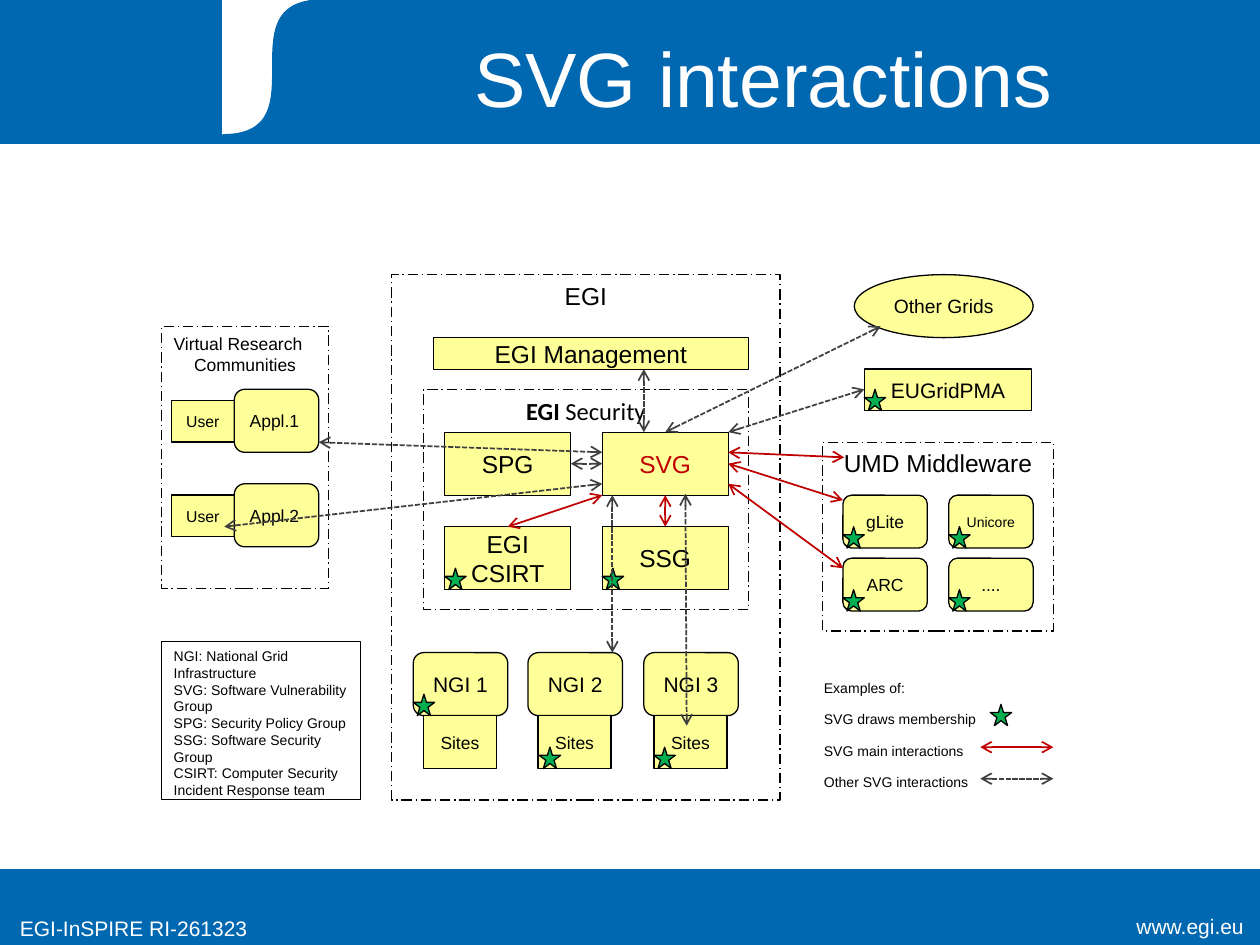
from lxml import etree
from pptx import Presentation
from pptx.dml.color import RGBColor
from pptx.enum import dml, shapes, text
from pptx.oxml.ns import qn
from pptx.util import Inches, Pt

COLORS = {"blue": "0067B1", "white": "FFFFFF", "black": "000000", "yellow": "FFFF99",
          "red": "C00000", "grey": "404040", "green": "00B050"}
KINDS = shapes.MSO_SHAPE
RECT, ROUND, OVAL = KINDS.RECTANGLE, KINDS.ROUNDED_RECTANGLE, KINDS.OVAL
LEFT, CENTER, RIGHT = text.PP_ALIGN.LEFT, text.PP_ALIGN.CENTER, text.PP_ALIGN.RIGHT
TOP, MIDDLE = text.MSO_ANCHOR.TOP, text.MSO_ANCHOR.MIDDLE

TITLE = "SVG interactions"
# (left, top, width, height), paragraphs, text format
GROUPS = [
    ((3.36, 3.09, 2.58, 1.75), [[("EGI ", True), ("Security", False)]],
     dict(size=14, font="Calibri")),
    ((3.11, 2.18, 3.08, 4.17), ["EGI"], dict(size=14)),
    ((1.28, 2.59, 1.33, 2.08), ["Virtual Research", "Communities"],
     dict(size=10, aligns=[LEFT, CENTER])),
    ((6.53, 3.51, 1.83, 1.5), ["UMD Middleware"], dict(size=14)),
]
GLOSSARY = [
    "NGI: National Grid Infrastructure",
    "SVG: Software Vulnerability Group",
    "SPG: Security Policy Group",
    "SSG: Software Security Group",
    "CSIRT: Computer Security Incident Response team",
]
# label, kind, (left, top, width, height), text size, line width
BOXES = [
    ("SPG", RECT, (3.53, 3.43, 1, 0.5), 14, 0.5),
    ("SVG", RECT, (4.78, 3.43, 1, 0.5), 14, 0.5),
    ("EGI CSIRT", RECT, (3.53, 4.18, 1, 0.5), 14, 0.5),
    ("SSG", RECT, (4.78, 4.18, 1, 0.5), 14, 0.5),
    ("EGI Management", RECT, (3.44, 2.68, 2.5, 0.25), 14, 0.5),
    ("Other Grids", OVAL, (6.78, 2.18, 1.42, 0.5), 11, 0.75),
    ("EUGridPMA", RECT, (6.86, 2.93, 1.33, 0.33), 12, 0.75),
]
for number, left in enumerate((3.28, 4.19, 5.11), 1):
    BOXES += [(f"NGI {number}", ROUND, (left, 5.18, 0.75, 0.5), 12, 0.75),
              ("Sites", RECT, (left + 0.08, 5.68, 0.58, 0.42), 10, 0.75)]
for number, top in enumerate((3.09, 3.84), 1):
    BOXES += [("User", RECT, (1.36, top + 0.09, 0.5, 0.33), 9, 0.75),
              (f"Appl.{number}", ROUND, (1.86, top, 0.67, 0.5), 10, 0.75)]
MIDDLEWARE = [[("gLite", 10), ("Unicore", 8)], [("ARC", 10), ("....", 10)]]
for row, items in enumerate(MIDDLEWARE):
    for column, (label, size) in enumerate(items):
        position = (6.69 + 0.84 * column, 3.93 + 0.5 * row, 0.67, 0.42)
        BOXES.append((label, ROUND, position, size, 0.75))

STARS = [(7.86, 5.59), (4.28, 5.93), (5.19, 5.93), (3.28, 5.51), (4.78, 4.51),
         (3.53, 4.51), (6.86, 3.09), (6.69, 4.18), (6.69, 4.68), (7.53, 4.18), (7.53, 4.68)]
MAIN_ARROWS = [
    (7.78, 5.93, 8.36, 5.93), (4.78, 3.93, 4.03, 4.18), (5.28, 3.93, 5.28, 4.18),
    (5.78, 3.59, 6.7, 3.63), (5.78, 3.68, 6.69, 3.97), (5.78, 3.84, 6.69, 4.51),
]
OTHER_ARROWS = [
    (7.78, 6.18, 8.36, 6.18), (4.86, 3.93, 4.86, 5.18), (5.44, 3.92, 5.45, 5.76),
    (5.11, 2.93, 5.11, 3.43), (5.28, 3.43, 6.99, 2.59), (2.53, 3.51, 4.78, 3.59),
    (1.78, 4.18, 4.78, 3.84), (5.78, 3.43, 6.86, 3.09), (4.53, 3.68, 4.78, 3.68),
]
LEGEND = ["Examples of:", "SVG draws membership", "SVG main interactions",
          "Other SVG interactions"]


def rgb(name):
    return RGBColor.from_string(COLORS[name])


def write_text(shape, paragraphs, size=10, font="Arial", color="black",
               aligns=(CENTER,), anchor=MIDDLE, wrap=True):
    """Each paragraph is a string or a list of (text, bold); the last align repeats."""
    frame = shape.text_frame
    frame.word_wrap = wrap
    frame.vertical_anchor = anchor
    for index, content in enumerate(paragraphs):
        paragraph = frame.add_paragraph() if index else frame.paragraphs[0]
        paragraph.alignment = aligns[min(index, len(aligns) - 1)]
        runs = [(content, None)] if isinstance(content, str) else content
        for words, bold in runs:
            run = paragraph.add_run()
            run.text = words
            run.font.name, run.font.size, run.font.bold = font, Pt(size), bold
            run.font.color.rgb = rgb(color)


def style(shape, fill=None, line="black", width=0.75):
    shape.shadow.inherit = False
    if fill:
        shape.fill.solid()
        shape.fill.fore_color.rgb = rgb(fill)
    else:
        shape.fill.background()
    shape.line.color.rgb = rgb(line)
    shape.line.width = Pt(width)
    return shape


def add_box(slide, kind, position, **look):
    return style(slide.shapes.add_shape(kind, *map(Inches, position)), **look)


def add_label(slide, position, words, **format):
    write_text(slide.shapes.add_textbox(*map(Inches, position)), [words], **format)


def add_arrow(slide, ends, color, dash=None):
    arrow = slide.shapes.add_connector(shapes.MSO_CONNECTOR.STRAIGHT, *map(Inches, ends))
    arrow.line.color.rgb = rgb(color)
    arrow.line.width = Pt(1)
    if dash:
        arrow.line.dash_style = dash
    outline = arrow.line._get_or_add_ln()
    for end in ("a:headEnd", "a:tailEnd"):
        etree.SubElement(outline, qn(end), type="arrow")
    etree.SubElement(arrow._element.spPr, qn("a:effectLst"))


def bezier(points, steps=40):
    """Points along a cubic curve, without its first one."""
    for step in range(1, steps + 1):
        t = step / steps
        weights = ((1 - t) ** 3, 3 * t * (1 - t) ** 2, 3 * t ** 2 * (1 - t), t ** 3)
        yield tuple(Inches(sum(w * p[axis] for w, p in zip(weights, points)))
                    for axis in (0, 1))


def add_bands(slide):
    add_box(slide, RECT, (0, 6.9, 10, 0.6), fill="blue", line="blue")
    add_box(slide, RECT, (0, 0, 10, 1.14), fill="blue", line="blue")
    add_box(slide, RECT, (1.77, 0, 1.97, 1.07), fill="white", line="white")
    builder = slide.shapes.build_freeform(Inches(3.74), 0)
    builder.add_line_segments([(Inches(3.74), Inches(1.07)), (Inches(1.77), Inches(1.07))],
                              close=False)
    builder.add_line_segments(bezier([(1.77, 1.07), (2.56, 1.07), (1.77, 0), (2.56, 0)]))
    style(builder.convert_to_shape(), fill="blue", line="blue")
    add_label(slide, (8.39, 7.2, 1.58, 0.31), "www.egi.eu",
              size=12, color="white", aligns=[RIGHT], anchor=TOP)
    add_label(slide, (0.06, 7.22, 2.5, 0.31), "EGI-InSPIRE RI-261323",
              size=12, color="white", aligns=[LEFT], anchor=TOP)


def add_title(slide):
    title = slide.shapes.title
    title.left, title.top, title.width, title.height = map(Inches, (2.32, 0.13, 7.48, 0.95))
    write_text(title, [TITLE], size=44, color="white")
    slide.shapes._spTree.append(title._element)  # in front of the header band


def main():
    presentation = Presentation()
    presentation.slide_width, presentation.slide_height = Inches(10), Inches(7.5)
    slide = presentation.slides.add_slide(presentation.slide_layouts[5])
    add_bands(slide)
    for position, paragraphs, format in GROUPS:
        group = add_box(slide, RECT, position)
        group.line.dash_style = dml.MSO_LINE.LONG_DASH_DOT
        write_text(group, paragraphs, anchor=TOP, **format)
    for label, kind, position, size, width in BOXES:
        box = add_box(slide, kind, position, fill="yellow", width=width)
        write_text(box, [label], size=size, color="red" if label == "SVG" else "black",
                   aligns=[LEFT if label.startswith("Appl") else CENTER])
    glossary = add_box(slide, RECT, (1.28, 5.09, 1.58, 1.25), width=0.25)
    write_text(glossary, GLOSSARY, size=8, aligns=[LEFT], anchor=TOP)
    for index, label in enumerate(LEGEND):
        add_label(slide, (6.44, 5.34 + 0.25 * index, 1.42, 0.23), label,
                  size=8, aligns=[LEFT], anchor=TOP, wrap=False)
    for left, top in STARS:
        add_box(slide, KINDS.STAR_5_POINT, (left, top, 0.17, 0.17), fill="green")
    for ends in MAIN_ARROWS:
        add_arrow(slide, ends, "red")
    for ends in OTHER_ARROWS:
        add_arrow(slide, ends, "grey", dml.MSO_LINE.SQUARE_DOT)
    add_title(slide)
    presentation.save("out.pptx")


if __name__ == "__main__":
    main()
